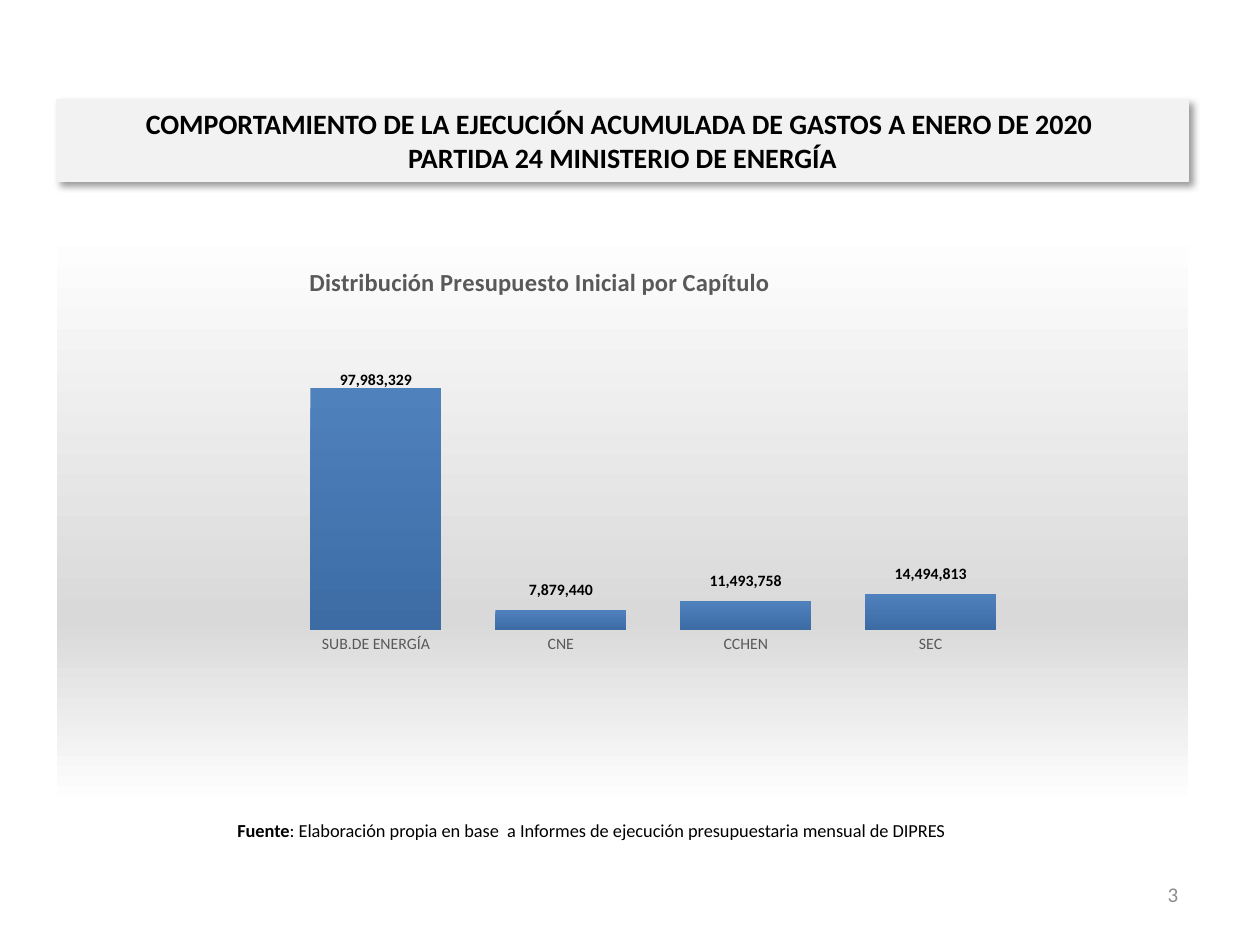
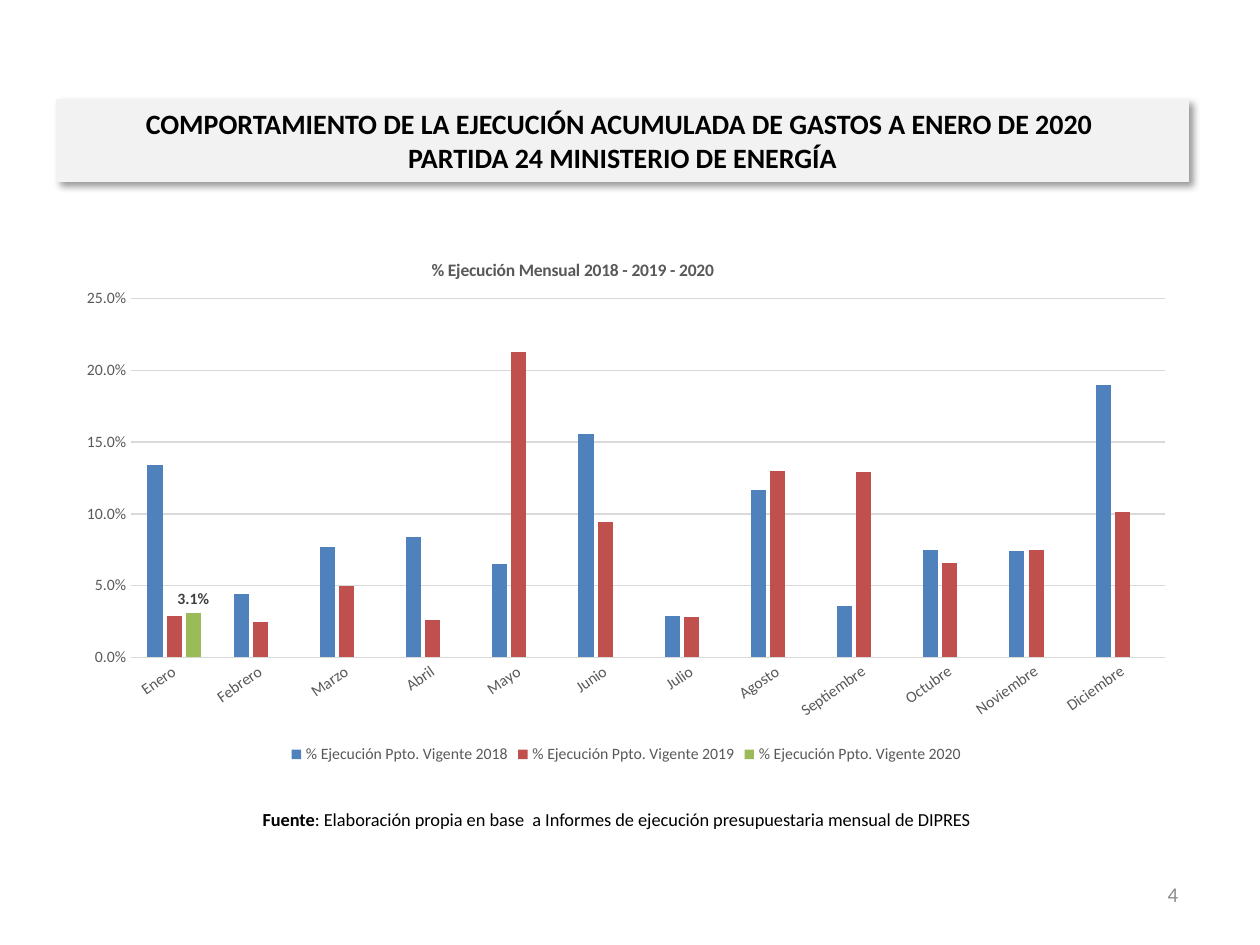
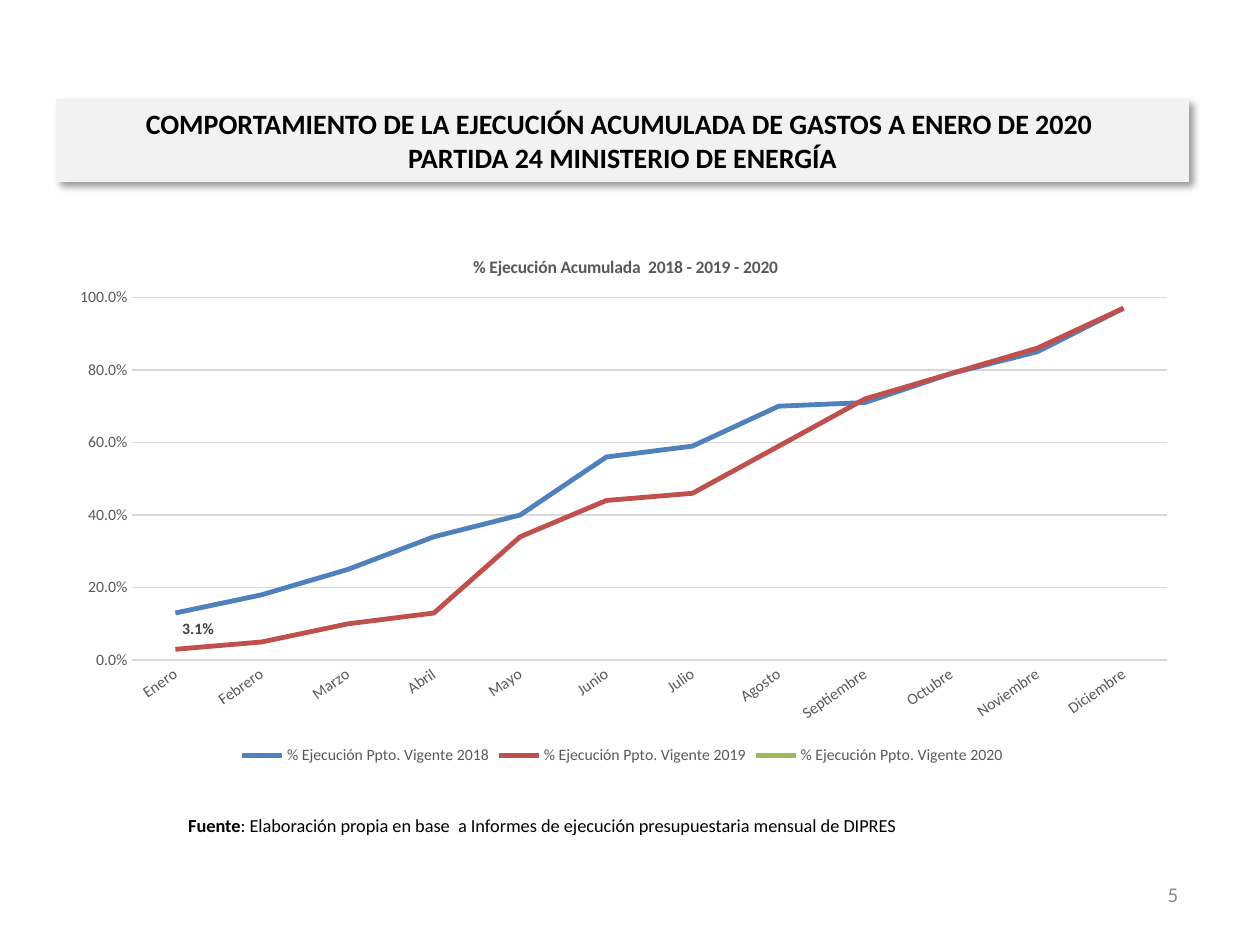
import pptx
import pptx.chart.data
import pptx.dml.color
import pptx.enum.chart
import pptx.enum.text
import pptx.oxml
import pptx.oxml.ns
from pptx.util import Inches

COLORS = {
    "black": "000000", "band": "F2F2F2", "muted": "595959", "label": "404040",
    "number": "8C8C8C", "grid": "D9D9D9", "white": "FFFFFF",
    "blue": "4F81BD", "dark_blue": "3D6CA4", "red": "C0504D", "green": "9BBB59",
}
SERIES_COLORS = ["blue", "red", "green"]
FONT = "Calibri"
TITLE = ("COMPORTAMIENTO DE LA EJECUCIÓN ACUMULADA DE GASTOS A ENERO DE 2020 \n"
         "PARTIDA 24 MINISTERIO DE ENERGÍA")
SOURCE = ": Elaboración propia en base  a Informes de ejecución presupuestaria mensual de DIPRES"
MONTHS = ["Enero", "Febrero", "Marzo", "Abril", "Mayo", "Junio", "Julio",
          "Agosto", "Septiembre", "Octubre", "Noviembre", "Diciembre"]
YEARS = [2018, 2019, 2020]
MONTHLY = [
    [0.134, 0.044, 0.077, 0.084, 0.065, 0.156, 0.029, 0.117, 0.036, 0.075, 0.074, 0.19],
    [0.029, 0.025, 0.05, 0.026, 0.213, 0.094, 0.028, 0.13, 0.129, 0.066, 0.075, 0.101],
    [0.031],
]
ACCUMULATED = [
    [0.13, 0.18, 0.25, 0.34, 0.4, 0.56, 0.59, 0.7, 0.71, 0.79, 0.85, 0.97],
    [0.03, 0.05, 0.1, 0.13, 0.34, 0.44, 0.46, 0.59, 0.72, 0.79, 0.86, 0.97],
    [0.031],
]
CHART_TYPE = pptx.enum.chart.XL_CHART_TYPE
LABEL_POSITION = pptx.enum.chart.XL_LABEL_POSITION
ALIGN = pptx.enum.text.PP_ALIGN


def rgb(name):
    return pptx.dml.color.RGBColor.from_string(COLORS[name])


def format_font(font, size, color, bold=False):
    font.name = FONT
    font.size = pptx.util.Pt(size)
    font.bold = bold
    font.color.rgb = rgb(color)


def write_text(paragraph, text, size=10, color="black", bold=False, align=None):
    if align is not None:
        paragraph.alignment = align
    for index, line in enumerate(text.split("\n")):
        if index:
            paragraph.add_line_break()
        run = paragraph.add_run()
        run.text = line
        format_font(run.font, size, color, bold)


def xml(text, *prefixes):
    head, tail = text.split(">", 1)
    slash = "/" if head.endswith("/") else ""
    return pptx.oxml.parse_xml(
        f"{head.rstrip('/')} {pptx.oxml.ns.nsdecls(*prefixes)}{slash}>{tail}")


def gradient(stops):
    marks = "".join(f'<a:gs pos="{position * 1000}"><a:srgbClr val="{COLORS[color]}"/></a:gs>'
                    for position, color in stops)
    return xml(f'<a:gradFill><a:gsLst>{marks}</a:gsLst><a:lin ang="5400000"/></a:gradFill>', "a")


def set_layout(element, index, x, y, size=None):
    for layout in element.findall(pptx.oxml.ns.qn("c:layout")):
        element.remove(layout)
    target, modes, extent = "", "", ""
    if size:
        target = '<c:layoutTarget val="inner"/>'
        extent = f'<c:w val="{size[0]}"/><c:h val="{size[1]}"/>'
    if size is not None:
        modes = '<c:xMode val="edge"/><c:yMode val="edge"/>'
    element.insert(index, xml(
        f'<c:layout><c:manualLayout>{target}{modes}<c:x val="{x}"/><c:y val="{y}"/>'
        f'{extent}</c:manualLayout></c:layout>', "c"))


class Deck:
    def __init__(self):
        self.presentation = pptx.Presentation()
        self.presentation.slide_width = Inches(10)
        self.presentation.slide_height = Inches(7.5)
        self.slide = None

    def start_slide(self, number, source_box):
        self.slide = self.presentation.slides.add_slide(self.presentation.slide_layouts[5])
        self.title_band()
        self.text_box((7.12, 6.9, 2.33, 0.4), [(str(number), False)], 12, "number", ALIGN.RIGHT)
        self.text_box(source_box, [("Fuente", True), (SOURCE, False)], 10.5, "black", ALIGN.CENTER)

    def title_band(self):
        shape = self.slide.shapes.title
        shape.left, shape.top, shape.width, shape.height = map(Inches, (0.45, 0.79, 8.98, 0.65))
        shape.fill.solid()
        shape.fill.fore_color.rgb = rgb("band")
        shape.line.color.rgb = rgb("band")
        shape.line.width = pptx.util.Pt(0.75)
        shape._element.spPr.append(xml(
            '<a:effectLst><a:outerShdw blurRad="50800" dist="38100" dir="2700000" algn="tl" '
            f'rotWithShape="0"><a:srgbClr val="{COLORS["black"]}"><a:alpha val="40000"/>'
            '</a:srgbClr></a:outerShdw></a:effectLst>', "a"))
        frame = shape.text_frame
        frame.auto_size = pptx.enum.text.MSO_AUTO_SIZE.NONE
        frame.vertical_anchor = pptx.enum.text.MSO_ANCHOR.MIDDLE
        write_text(frame.paragraphs[0], TITLE, size=16, bold=True, align=ALIGN.CENTER)

    def text_box(self, box, parts, size, color, align):
        frame = self.slide.shapes.add_textbox(*map(Inches, box)).text_frame
        frame.word_wrap = True
        frame.vertical_anchor = pptx.enum.text.MSO_ANCHOR.MIDDLE
        for text, bold in parts:
            write_text(frame.paragraphs[0], text, size=size, color=color, bold=bold, align=align)

    def chart(self, kind, box, plot_box, title, title_at, categories, series, number_format,
              title_size=10):
        data = pptx.chart.data.CategoryChartData(number_format=number_format)
        data.categories = categories
        for name, values in series:
            data.add_series(name, values + [None] * (len(categories) - len(values)))
        chart = self.slide.shapes.add_chart(kind, *map(Inches, box), data).chart
        format_font(chart.font, 10, "black")
        left, top, width, height = box

        chart.has_title = True
        write_text(chart.chart_title.text_frame.paragraphs[0], title,
                   size=title_size, color="muted", bold=True)
        set_layout(chart.chart_title._element, 1,
                   (title_at[0] - left) / width, (title_at[1] - top) / height, ())
        set_layout(chart._chartSpace.chart.plotArea, 0,
                   (plot_box[0] - left) / width, (plot_box[1] - top) / height,
                   (plot_box[2] / width, plot_box[3] / height))

        for axis in (chart.category_axis, chart.value_axis):
            axis.major_tick_mark = pptx.enum.chart.XL_TICK_MARK.NONE
            axis.format.line.fill.background()
            format_font(axis.tick_labels.font, 9, "muted")
        chart.has_legend = False
        chart.plots[0].vary_by_categories = False
        for item, color in zip(chart.plots[0].series, SERIES_COLORS):
            if kind == CHART_TYPE.LINE:
                item.smooth = False
                item.marker.style = pptx.enum.chart.XL_MARKER_STYLE.NONE
                item.format.line.color.rgb = rgb(color)
                item.format.line.width = pptx.util.Pt(2.75)
            else:
                item.format.fill.solid()
                item.format.fill.fore_color.rgb = rgb(color)
        return chart

    def yearly_chart(self, kind, box, plot_box, title, title_at, rows, maximum, step, axis_width):
        series = [(f"% Ejecución Ppto. Vigente {year}", values) for year, values in zip(YEARS, rows)]
        chart = self.chart(kind, box, plot_box, title, title_at, MONTHS, series, "0.0%")
        axis = chart.value_axis
        axis.minimum_scale, axis.maximum_scale, axis.major_unit = 0, maximum, step
        axis.tick_labels.number_format = "0.0%"
        axis.tick_labels.number_format_is_linked = False
        for line, width in ((axis.major_gridlines.format.line, 0.75),
                            (chart.category_axis.format.line, axis_width)):
            line.color.rgb = rgb("grid")
            line.width = pptx.util.Pt(width)
        body = chart.category_axis._element.txPr.find(pptx.oxml.ns.qn("a:bodyPr"))
        body.set("rot", str(-35 * 60000))
        chart.has_legend = True
        chart.legend.position = pptx.enum.chart.XL_LEGEND_POSITION.BOTTOM
        chart.legend.include_in_layout = False
        format_font(chart.legend.font, 9, "muted")
        return chart

    def value_labels(self, series, position, color, number_format, shifts=()):
        labels = series.data_labels
        labels.show_value = True
        labels.position = position
        labels.number_format = number_format
        labels.number_format_is_linked = False
        format_font(labels.font, 9, color, True)
        for index, (x, y) in enumerate(shifts):
            label = series.points[index].data_label
            format_font(label.font, 9, color, True)
            label.position = position
            set_layout(label._dLbl, 1, x, y)


def add_budget_slide(deck):
    deck.start_slide(3, (0.98, 6.39, 7.43, 0.4))
    chart = deck.chart(
        CHART_TYPE.COLUMN_CLUSTERED, (0.45, 1.79, 8.98, 4.6), (2.25, 2.65, 5.87, 2.35),
        "Distribución Presupuesto Inicial por Capítulo", (2.42, 2.07),
        ["SUB.DE ENERGÍA", "CNE", "CCHEN", "SEC"],
        [("Presupuesto Inicial", [97983329, 7879440, 11493758, 14494813])],
        "#,##0", title_size=14)
    chart.value_axis.minimum_scale, chart.value_axis.maximum_scale = 0, 120000000
    chart.value_axis.has_major_gridlines = False
    chart.value_axis.visible = False
    chart.plots[0].gap_width = 41
    bars = chart.plots[0].series[0]
    bar_properties = bars._element.get_or_add_spPr()
    bar_properties.clear()
    bar_properties.append(gradient([(0, "blue"), (100, "dark_blue")]))
    background = xml("<c:spPr><a:ln><a:noFill/></a:ln></c:spPr>", "c", "a")
    background.insert(0, gradient([(0, "white"), (68, "grid"), (100, "white")]))
    chart._chartSpace.chart.addnext(background)
    deck.value_labels(bars, LABEL_POSITION.OUTSIDE_END, "black", "#,##0",
                      [(0, 0.01), (0, -0.01), (0, -0.01), (0, -0.01)])


def add_monthly_slide(deck):
    deck.start_slide(4, (1.06, 6.3, 7.67, 0.4))
    chart = deck.yearly_chart(
        CHART_TYPE.COLUMN_CLUSTERED, (0.51, 1.83, 8.92, 4.27), (1.04, 2.37, 8.21, 2.85),
        "% Ejecución Mensual 2018 - 2019 - 2020", (3.4, 2.03), MONTHLY, 0.25, 0.05, 0.75)
    plot = chart.plots[0]
    plot.gap_width, plot.overlap = 219, -27
    deck.value_labels(plot.series[2], LABEL_POSITION.OUTSIDE_END, "label", "0.0%")


def add_accumulated_slide(deck):
    deck.start_slide(5, (0.47, 6.35, 7.67, 0.4))
    chart = deck.yearly_chart(
        CHART_TYPE.LINE, (0.45, 1.82, 8.98, 4.29), (1.05, 2.36, 8.21, 2.88),
        "% Ejecución Acumulada  2018 - 2019 - 2020", (3.73, 2), ACCUMULATED, 1, 0.2, 1)
    deck.value_labels(chart.plots[0].series[2], LABEL_POSITION.ABOVE, "label", "0.0%",
                      [(0.02, -0.01)])


def main():
    deck = Deck()
    add_budget_slide(deck)
    add_monthly_slide(deck)
    add_accumulated_slide(deck)
    deck.presentation.save("out.pptx")


if __name__ == "__main__":
    main()
